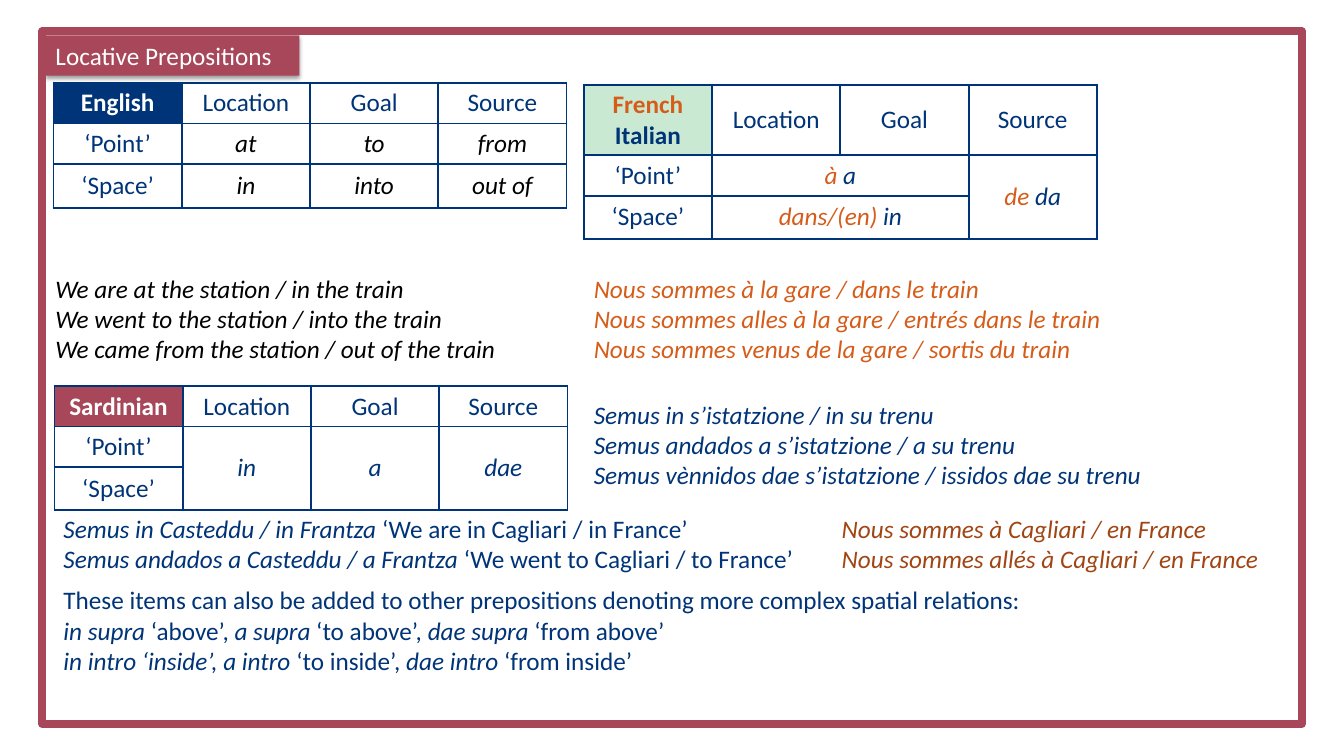
from dataclasses import dataclass

import lxml.etree
import pptx
import pptx.dml.color
import pptx.enum.shapes
import pptx.enum.text
import pptx.oxml
import pptx.oxml.ns
import pptx.util


@dataclass(frozen=True)
class Theme:
    """Colours, font and sizes of the slide."""
    navy: str = "003478"
    crimson: str = "A8475A"
    orange: str = "D55C19"
    rust: str = "A04513"
    mint: str = "CAE9D3"
    black: str = "000000"
    white: str = "FFFFFF"
    font: str = "Calibri"
    size: float = 18
    frame_width: float = 5.67
    border_width: float = 1.5


THEME = Theme()
WIDTH, HEIGHT = pptx.util.Inches(13.33), pptx.util.Inches(7.5)
HEADINGS = [[(name, "navy")] for name in ("Location", "Goal", "Source")]
POINT, SPACE = [("‘Point’", "navy")], [("‘Space’", "navy")]
ROW_WEIGHTS = (40, 40, 43)


def colour(name):
    """Return the theme colour of that name."""
    return pptx.dml.color.RGBColor.from_string(getattr(THEME, name))


def place(box):
    """Turn a box in percent of the slide into lengths."""
    return [int(share * full / 100) for share, full in zip(box, (WIDTH, HEIGHT) * 2)]


def lines(style, *texts):
    """Give every line the same style."""
    return [[(text, style)] for text in texts]


def write(frame, content, align=pptx.enum.text.PP_ALIGN.LEFT):
    """Write lines of (text, style) segments into a text frame."""
    for index, segments in enumerate(content):
        paragraph = frame.add_paragraph() if index else frame.paragraphs[0]
        paragraph.alignment = align
        for text, style in segments:
            ink, *traits = style.split()
            run = paragraph.add_run()
            run.text = text
            run.font.name = THEME.font
            run.font.size = pptx.util.Pt(THEME.size)
            run.font.color.rgb = colour(ink)
            run.font.italic = "italic" in traits
            run.font.bold = "bold" in traits


def add_frame(slide, box):
    """Draw the border around the slide."""
    frame = slide.shapes.add_shape(pptx.enum.shapes.MSO_SHAPE.RECTANGLE, *place(box))
    frame.shadow.inherit = False
    frame.fill.background()
    frame.line.color.rgb = colour("crimson")
    frame.line.width = pptx.util.Pt(THEME.frame_width)


def add_title(slide, box, text):
    """Set the title as a shaded label."""
    title = slide.shapes.title
    title.left, title.top, title.width, title.height = place(box)
    title.fill.solid()
    title.fill.fore_color.rgb = colour("crimson")
    title.text_frame.auto_size = pptx.enum.text.MSO_AUTO_SIZE.NONE
    title.text_frame.vertical_anchor = pptx.enum.text.MSO_ANCHOR.TOP
    write(title.text_frame, lines("white", text))
    title._element.spPr.append(pptx.oxml.parse_xml(
        f'<a:effectLst {pptx.oxml.ns.nsdecls("a")}>'
        '<a:outerShdw blurRad="39600" dist="20300" dir="5400000" rotWithShape="0">'
        f'<a:srgbClr val="{THEME.black}"><a:alpha val="38000"/></a:srgbClr>'
        '</a:outerShdw></a:effectLst>'))


def add_text(slide, box, content):
    """Add a block of example sentences."""
    frame = slide.shapes.add_textbox(*place(box)).text_frame
    frame.word_wrap = True
    write(frame, content)


def add_borders(cell):
    """Rule all four sides of a cell."""
    width = pptx.util.Pt(THEME.border_width)
    for index, side in enumerate("LRTB"):
        cell._tc.get_or_add_tcPr().insert(index, pptx.oxml.parse_xml(
            f'<a:ln{side} {pptx.oxml.ns.nsdecls("a")} w="{width}"><a:solidFill>'
            f'<a:srgbClr val="{THEME.navy}"/></a:solidFill></a:ln{side}>'))


def add_paradigm(slide, box, language, language_fill, body, merges=(), weights=ROW_WEIGHTS):
    """Add the preposition table of a language."""
    left, top, width, height = place(box)
    rows = [[language] + [[name] for name in HEADINGS]]
    rows += [[[segments] if segments else [] for segments in row] for row in body]
    grid = slide.shapes.add_table(len(rows), len(rows[0]), left, top, width, height).table
    grid.first_row = grid.horz_banding = False
    for row, weight in zip(grid.rows, weights):
        row.height = int(height * weight / sum(weights))
    for r, row in enumerate(rows):
        for c, content in enumerate(row):
            cell = grid.cell(r, c)
            cell.fill.solid()
            cell.fill.fore_color.rgb = colour("white" if r or c else language_fill)
            cell.vertical_anchor = pptx.enum.text.MSO_ANCHOR.MIDDLE
            write(cell.text_frame, content, pptx.enum.text.PP_ALIGN.CENTER)
            add_borders(cell)
    for first, last in merges:
        grid.cell(*first).merge(grid.cell(*last))


def add_english(slide):
    """Add the English table and sentences."""
    add_paradigm(slide, (3.98, 10.93, 38.18, 16.4), lines("white bold", "English"), "navy", [
        [POINT] + lines("black italic", "at", "to", "from"),
        [SPACE] + lines("black italic", "in", "into", "out of")])
    add_text(slide, (3.38, 35.47, 37.58, 13.47), lines(
        "black italic",
        "We are at the station / in the train",
        "We went to the station / into the train",
        "We came from the station / out of the train"))


def add_french_italian(slide):
    """Add the French and Italian table and the French sentences."""
    add_paradigm(
        slide, (43.44, 11.2, 38.18, 20.4),
        lines("orange bold", "French") + lines("navy bold", "Italian"), "mint",
        [[POINT, [("à", "orange italic"), (" a", "navy italic")], None,
          [("de ", "orange italic"), ("da", "navy italic")]],
         [SPACE, [("dans/(en) ", "orange italic"), ("in", "navy italic")], None, None]],
        merges=[((1, 1), (1, 2)), ((2, 1), (2, 2)), ((1, 3), (2, 3))],
        weights=(70, 40, 43))
    add_text(slide, (43.44, 35.47, 43.81, 13.47), lines(
        "orange italic",
        "Nous sommes à la gare / dans le train",
        "Nous sommes alles à la gare / entrés dans le train",
        "Nous sommes venus de la gare / sortis du train"))


def add_sardinian(slide):
    """Add the Sardinian table and sentences."""
    add_paradigm(
        slide, (4.05, 51.07, 38.18, 16.4), lines("white bold", "Sardinian"), "crimson",
        [[POINT] + lines("navy italic", "in", "a", "dae"), [SPACE, None, None, None]],
        merges=[((1, c), (2, c)) for c in (1, 2, 3)])
    add_text(slide, (43.44, 52.13, 43.81, 13.47), lines(
        "navy italic",
        "Semus in s’istatzione / in su trenu",
        "Semus andados a s’istatzione / a su trenu",
        "Semus vènnidos dae s’istatzione / issidos dae su trenu"))


def add_place_names(slide):
    """Add the sentences with place names and the complex prepositions."""
    add_text(slide, (3.98, 67.2, 57.39, 9.47), [
        [("Semus in Casteddu / in Frantza ", "navy italic"),
         ("‘We are in Cagliari / in France’", "navy")],
        [("Semus andados a Casteddu / a Frantza ", "navy italic"),
         ("‘We went to Cagliari / to France’", "navy")]])
    add_text(slide, (61.89, 67.2, 33.91, 9.47), lines(
        "rust italic",
        "Nous sommes à Cagliari / en France",
        "Nous sommes allés à Cagliari / en France"))
    add_text(slide, (3.98, 76.67, 87.32, 13.47), [
        [("These items can also be added to other prepositions denoting "
          "more complex spatial relations:", "navy")],
        [("in supra", "navy italic"), (" ‘above’, ", "navy"),
         ("a supra", "navy italic"), (" ‘to above’, ", "navy"),
         ("dae supra", "navy italic"), (" ‘from above’", "navy")],
        [("in intro ‘inside’, a intro", "navy italic"), (" ‘to inside’, ", "navy"),
         ("dae intro", "navy italic"), (" ‘from inside’", "navy")]])


def main():
    """Build and save the slide."""
    deck = pptx.Presentation()
    deck.slide_width, deck.slide_height = WIDTH, HEIGHT
    slide = deck.slides.add_slide(deck.slide_layouts.get_by_name("Title Only"))
    add_frame(slide, (3.15, 4.13, 93.7, 91.6))
    add_title(slide, (3.38, 4.67, 18.9, 5.33), "Locative Prepositions")
    add_english(slide)
    add_french_italian(slide)
    add_sardinian(slide)
    add_place_names(slide)
    deck.save("out.pptx")


if __name__ == "__main__":
    main()
